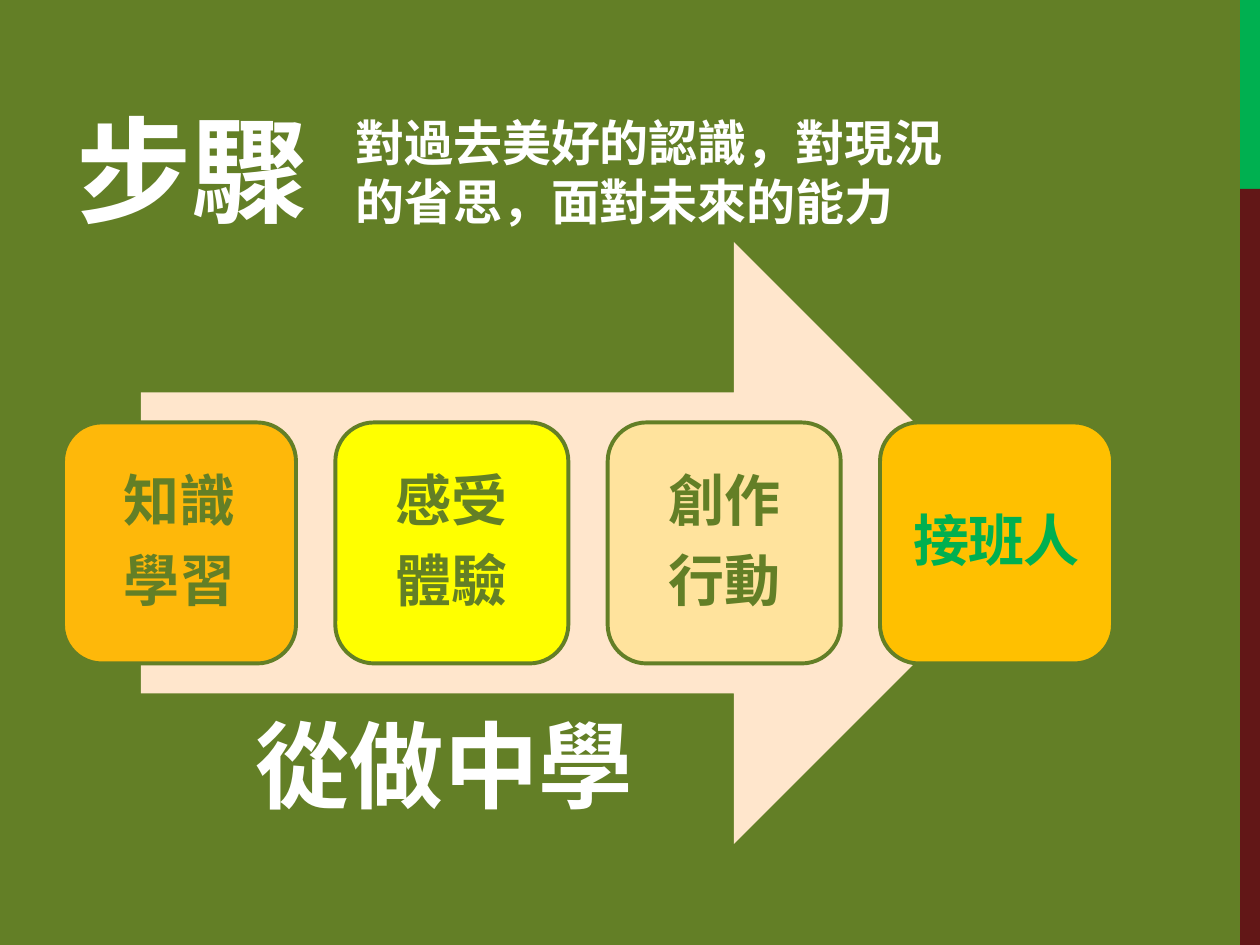
"""Build a slide showing steps of learning by doing along an arrow."""
from pptx import Presentation
from pptx import util as u
from pptx.dml.color import RGBColor
from pptx.enum import shapes, text

SCALE = 914400 / 126
OLIVE = RGBColor(0x63, 0x7F, 0x26)
GREEN = RGBColor(0x00, 0xB0, 0x50)
MAROON = RGBColor(0x62, 0x17, 0x17)
WHITE = RGBColor(0xFF, 0xFF, 0xFF)
PEACH = RGBColor(0xFF, 0xE6, 0xCC)
ORANGE = RGBColor(0xFE, 0xB8, 0x0A)
YELLOW = RGBColor(0xFF, 0xFF, 0x00)
CREAM = RGBColor(0xFF, 0xE3, 0x9D)
AMBER = RGBColor(0xFF, 0xC0, 0x00)

STEPS = [
    (["知識", "學習"], ORANGE, OLIVE, "Arial", 0),
    (["感受", "體驗"], YELLOW, OLIVE, "Arial", 0),
    (["創作", "行動"], CREAM, OLIVE, "Arial", 0),
    (["接班人"], AMBER, GREEN, "Montserrat", -60),
]


def px(*lengths):
    """Turn px lengths into a list of EMU."""
    return [u.Emu(round(n * SCALE)) for n in lengths]


def add_run(p, wording, size, color, font="Arial", spacing=0):
    """Add one bold run to a paragraph."""
    r = p.add_run()
    r.text = wording
    r.font.size = u.Pt(size)
    r.font.bold = True
    r.font.name = font
    r.font.color.rgb = color
    if spacing:
        r.font._element.set("spc", str(spacing))


def add_block(s, kind, box, fill):
    """Add a flat filled shape without an outline."""
    sp = s.shapes.add_shape(kind, *px(*box))
    sp.shadow.inherit = False
    sp.fill.solid()
    sp.fill.fore_color.rgb = fill
    sp.line.fill.background()
    return sp


def add_side_bar(s, x, y, w, h):
    """Draw the two-colour bar, its top fifth green."""
    top = h // 5
    add_block(s, shapes.MSO_SHAPE.RECTANGLE, (x, y, w, top), GREEN)
    add_block(s, shapes.MSO_SHAPE.RECTANGLE, (x, y + top, w, h - top), MAROON)


def set_title(s, x, y, w, h):
    """Place the title placeholder and fill it."""
    sp = s.shapes.title
    sp.left, sp.top, sp.width, sp.height = px(x, y, w, h)
    tf = sp.text_frame
    tf.auto_size = text.MSO_AUTO_SIZE.NONE
    tf.vertical_anchor = text.MSO_ANCHOR.BOTTOM
    p = tf.paragraphs[0]
    p.alignment = text.PP_ALIGN.LEFT
    add_run(p, "步驟", 66, WHITE, "Montserrat", -60)


def add_caption(s, box, wording, size):
    """Add a wrapping white caption."""
    tf = s.shapes.add_textbox(*px(*box)).text_frame
    tf.word_wrap = True
    add_run(tf.paragraphs[0], wording, size, WHITE)


def add_step(s, box, lines, fill, color, font, spacing):
    """Add one rounded step card with its centred lines."""
    sp = add_block(s, shapes.MSO_SHAPE.ROUNDED_RECTANGLE, box, fill)
    sp.line.color.rgb = OLIVE
    sp.line.width = u.Pt(2.25)
    tf = sp.text_frame
    tf.word_wrap = True
    tf.vertical_anchor = text.MSO_ANCHOR.MIDDLE
    tf.margin_left, tf.margin_top, tf.margin_right, tf.margin_bottom = px(16, 16, 16, 16)
    for i, line in enumerate(lines):
        p = tf.add_paragraph() if i else tf.paragraphs[0]
        p.alignment = text.PP_ALIGN.CENTER
        p.line_spacing = 0.9
        p.space_after = u.Pt(11.2)
        add_run(p, line, 32, color, font, spacing)


def add_process(s, x, y, w, h):
    """Draw the arrow and the evenly spaced step cards over it."""
    inset, card_w, card_h = 78, 233, 241
    add_block(s, shapes.MSO_SHAPE.RIGHT_ARROW, (x + inset, y, w - 2 * inset, h), PEACH)
    pitch = (w - card_w) / (len(STEPS) - 1)
    for i, step in enumerate(STEPS):
        add_step(s, (x + i * pitch, y + (h - card_h) / 2, card_w, card_h), *step)


def main():
    """Build and save the slide."""
    prs = Presentation()
    prs.slide_width, prs.slide_height = px(1260, 945)
    s = prs.slides.add_slide(prs.slide_layouts[5])
    s.background.fill.solid()
    s.background.fill.fore_color.rgb = OLIVE
    add_side_bar(s, 1240, 0, 20, 945)
    set_title(s, 64, 55, 1033, 189)
    add_process(s, 63, 242, 1050, 602)
    add_caption(s, (343, 106, 630, 131), "對過去美好的認識，對現況的省思，面對未來的能力", 28)
    add_caption(s, (243, 701, 476, 127), "從做中學", 54)
    prs.save("out.pptx")


if __name__ == "__main__":
    main()
